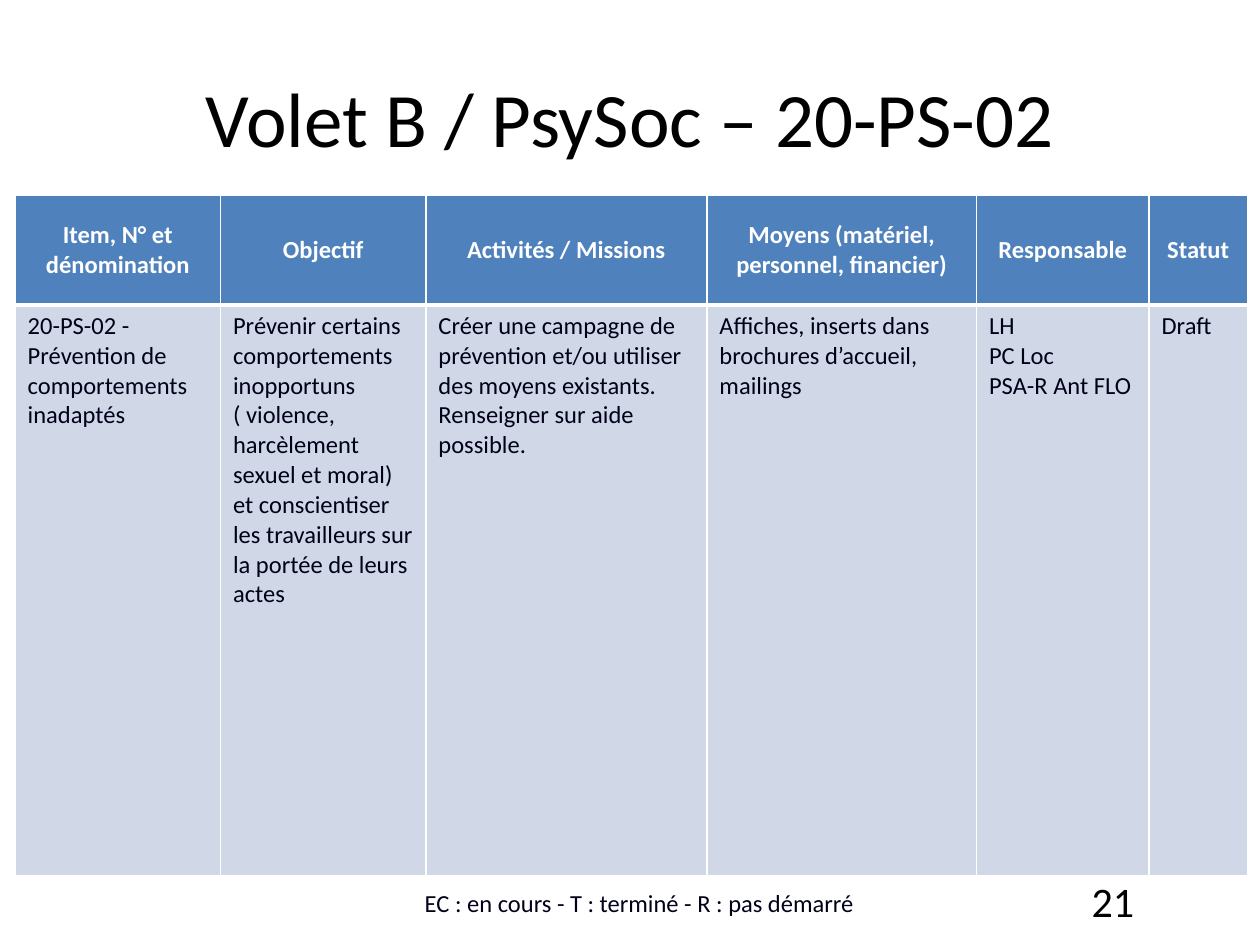
from lxml import etree
from pptx import Presentation
from pptx import util as u
from pptx.dml.color import RGBColor
from pptx.enum import text
from pptx.oxml.ns import qn

WHITE, BLACK, INK = "FFFFFF", "000000", "000018"
HEADER, BODY = "4F81BD", "D0D8E8"
CENTER, LEFT, RIGHT = text.PP_ALIGN.CENTER, text.PP_ALIGN.LEFT, text.PP_ALIGN.RIGHT
MIDDLE, TOP, BOTTOM = text.MSO_ANCHOR.MIDDLE, text.MSO_ANCHOR.TOP, text.MSO_ANCHOR.BOTTOM


def colour(value):
    return RGBColor.from_string(value)


def write(frame, lines, align, anchor, ink, size, bold=False):
    """Fill a text frame with one paragraph per line; \\v breaks a line."""
    frame.word_wrap = True
    frame.vertical_anchor = anchor
    font = {"name": "Calibri", "size": u.Pt(size), "bold": bold}
    for index, line in enumerate(lines):
        para = frame.paragraphs[0] if index == 0 else frame.add_paragraph()
        para.text = line
        para.alignment = align
        for span in para.runs:
            for name, value in font.items():
                setattr(span.font, name, value)
            span.font.color.rgb = colour(ink)


deck = Presentation()
deck.slide_width, deck.slide_height = u.Inches(10), u.Inches(7.5)
page = deck.slides.add_slide(deck.slide_layouts.get_by_name("Title Only"))

# Title
title = page.shapes.title
title.left, title.top = u.Inches(0.5), u.Inches(0.3)
title.width, title.height = u.Inches(9), u.Inches(1.25)
write(title.text_frame, ["Volet B / PsySoc – 20-PS-02"], CENTER, MIDDLE, BLACK, 44)

# Table: width, heading and paragraphs of each column
columns = [
    (1.63, "Item, N° et dénomination",
     ["20-PS-02 - Prévention de comportements inadaptés"]),
    (1.63, "Objectif",
     ["Prévenir certains comportements inopportuns ( violence, harcèlement sexuel et moral)",
      "et conscientiser les travailleurs sur la portée de leurs actes"]),
    (2.23, "Activités / Missions",
     ["Créer une campagne de prévention et/ou utiliser des moyens existants. "
      "Renseigner sur aide possible."]),
    (2.14, "Moyens (matériel, personnel, financier)",
     ["Affiches, inserts dans brochures d’accueil, mailings"]),
    (1.37, "Responsable", ["LH\vPC Loc", "PSA-R Ant FLO"]),
    (0.78, "Statut", ["Draft"]),
]
row_heights = [0.87, 4.53]
table_width = sum(width for width, _, _ in columns)
table = page.shapes.add_table(
    2, len(columns), u.Inches(0.12), u.Inches(1.55),
    u.Inches(table_width), u.Inches(sum(row_heights))).table
for row, height in zip(table.rows, row_heights):
    row.height = u.Inches(height)

for col, (width, heading, body) in enumerate(columns):
    table.columns[col].width = u.Inches(width)
    rows = [([heading], CENTER, MIDDLE, WHITE, HEADER, True),
            (body, LEFT, TOP, INK, BODY, False)]
    for row, (lines, align, anchor, ink, fill, is_header) in enumerate(rows):
        cell = table.cell(row, col)
        write(cell.text_frame, lines, align, anchor, ink, 14, is_header)
        cell.vertical_anchor = anchor
        # White borders, with a thick rule between header and body
        for side in "LRTB":
            thick = (row, side) in ((0, "B"), (1, "T"))
            line = etree.SubElement(cell._tc.get_or_add_tcPr(), qn(f"a:ln{side}"),
                                    w=str(u.Pt(3 if thick else 1)))
            paint = etree.SubElement(line, qn("a:solidFill"))
            etree.SubElement(paint, qn("a:srgbClr"), val=WHITE)
        cell.fill.solid()
        cell.fill.fore_color.rgb = colour(fill)

# Page number and legend below the table
footer = [
    (7.17, 1.93, 0.4, "21", RIGHT, MIDDLE, BLACK, 24),
    (2.32, 5.51, 0.38, "EC : en cours - T : terminé - R : pas démarré",
     CENTER, BOTTOM, INK, 14),
]
for left, width, height, words, align, anchor, ink, size in footer:
    box = page.shapes.add_textbox(u.Inches(left), u.Inches(6.95),
                                  u.Inches(width), u.Inches(height))
    write(box.text_frame, [words], align, anchor, ink, size)

deck.save("out.pptx")
